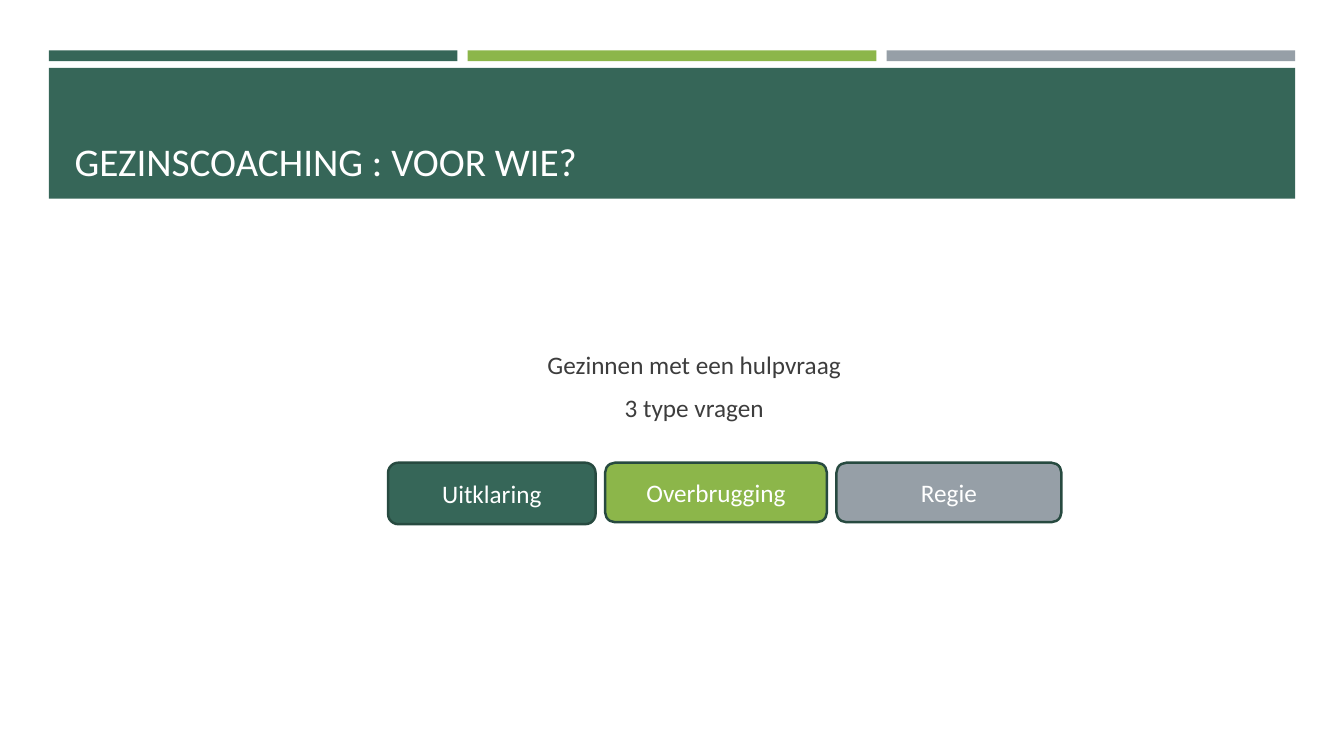
from pptx import Presentation
from pptx.dml.color import RGBColor
from pptx.enum.shapes import MSO_SHAPE
from pptx.enum.text import MSO_ANCHOR, PP_ALIGN
from pptx.util import Cm, Pt

GREEN, LIME, GREY = "366658", "8CB64A", "969FA7"
WHITE, DARK, EDGE = "FFFFFF", "3D3D3D", "274A40"


def color(code):
    return RGBColor.from_string(code)


def block(slide, kind, box, fill):
    shape = slide.shapes.add_shape(kind, *map(Cm, box))
    shape.shadow.inherit = False
    shape.fill.solid()
    shape.fill.fore_color.rgb = color(fill)
    shape.line.fill.background()
    return shape


def write(shape, lines, size, tint, align, anchor):
    frame = shape.text_frame
    frame.word_wrap = True
    frame.vertical_anchor = anchor
    frame.text = "\n".join(lines)
    for part in frame.paragraphs:
        part.alignment = align
        part.font.name = "Calibri"
        part.font.size = Pt(size)
        part.font.color.rgb = color(tint)
    return frame


def header(slide, box, title):
    left, top, width, height = box
    # Three bars across the top
    gap, bar, band = 0.26, 0.27, 0.44
    part = (width - 2 * gap) / 3
    for i, fill in enumerate((GREEN, LIME, GREY)):
        place = (left + i * (part + gap), top, part, bar)
        block(slide, MSO_SHAPE.RECTANGLE, place, fill)
    # Title band
    block(slide, MSO_SHAPE.RECTANGLE,
          (left, top + band, width, height - band), GREEN)
    text = slide.shapes.add_textbox(
        Cm(left + 0.4), Cm(top + 0.69), Cm(width - 0.8), Cm(2.82))
    write(text, [title], 28, WHITE, PP_ALIGN.LEFT, MSO_ANCHOR.BOTTOM)


def body(slide, box, lines):
    text = slide.shapes.add_textbox(*map(Cm, box))
    frame = write(text, lines, 18, DARK, PP_ALIGN.CENTER, MSO_ANCHOR.MIDDLE)
    # Insets move the lines right and above the centre
    frame.margin_left = Cm(1.35)
    frame.margin_bottom = Cm(2.98)
    for part in frame.paragraphs[1:]:
        part.space_before = Pt(9.6)


def buttons(slide, box, items):
    left, top, width, height = box
    gap = (width - sum(item[2] for item in items)) / (len(items) - 1)
    for label, fill, wide, extra in items:
        shape = block(slide, MSO_SHAPE.ROUNDED_RECTANGLE,
                      (left, top, wide, height + extra), fill)
        shape.line.color.rgb = color(EDGE)
        shape.line.width = Pt(1.75)
        write(shape, [label], 18, WHITE, PP_ALIGN.CENTER, MSO_ANCHOR.MIDDLE)
        left += wide + gap


def main():
    deck = Presentation()
    deck.slide_width, deck.slide_height = Cm(33.87), Cm(19.05)
    slide = deck.slides.add_slide(deck.slide_layouts[6])
    header(slide, (1.23, 1.27, 31.41, 3.74), "GEZINSCOACHING : VOOR WIE?")
    body(slide, (1.63, 6.05, 30.63, 10.21),
         ["Gezinnen met een hulpvraag", "3 type vragen"])
    # Label, fill, width, extra height
    buttons(slide, (9.78, 11.66, 16.97, 1.5), [
        ("Uitklaring", GREEN, 5.23, 0.05),
        ("Overbrugging", LIME, 5.59, 0),
        ("Regie", GREY, 5.67, 0),
    ])
    deck.save("out.pptx")


if __name__ == "__main__":
    main()
